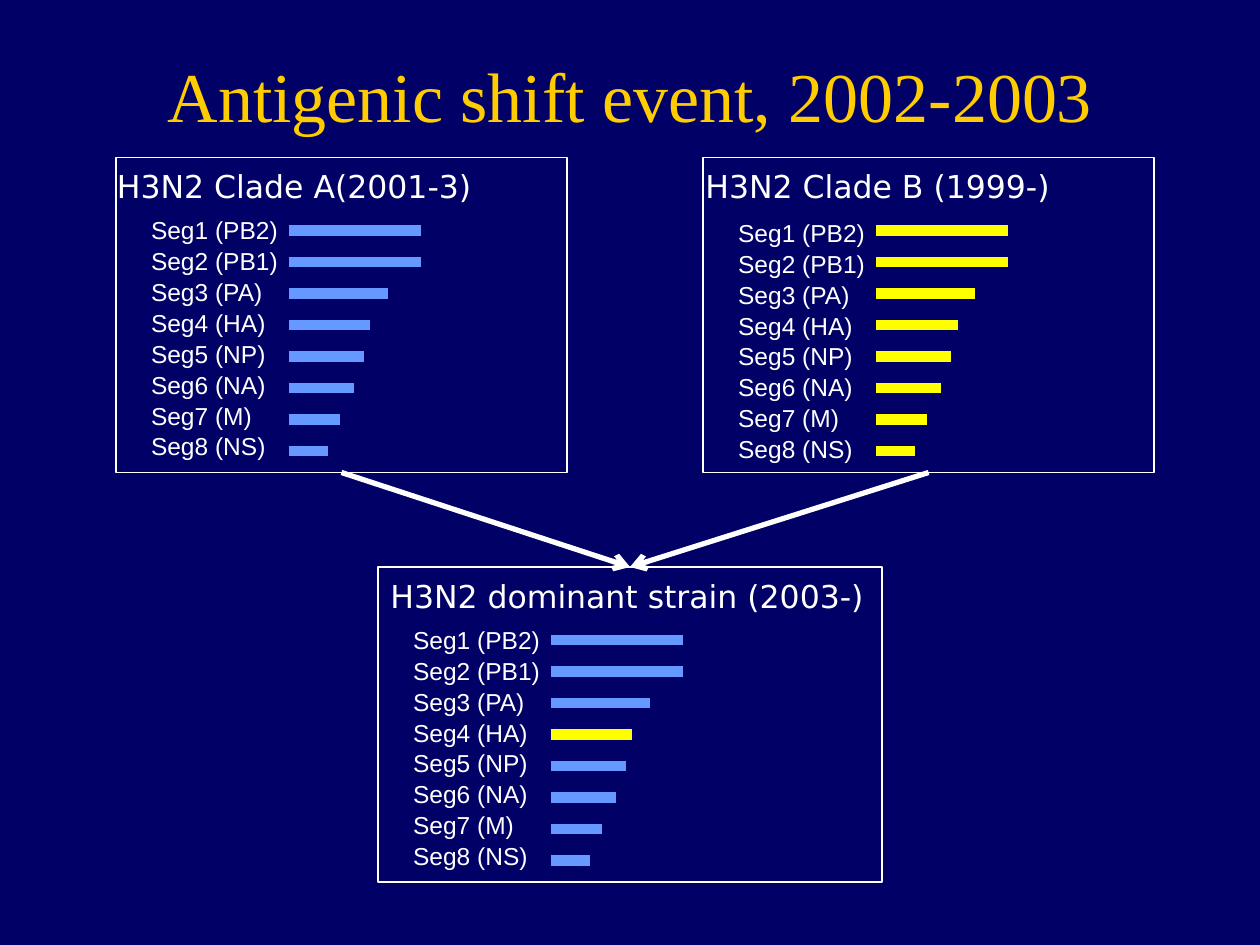
from dataclasses import dataclass

from lxml import etree
from pptx import Presentation
from pptx.dml.color import RGBColor
from pptx.enum import shapes, text
from pptx.oxml import ns
from pptx.util import Inches, Pt


@dataclass(frozen=True)
class Theme:
    background: str = "000066"
    title: str = "FFCC00"
    white: str = "FFFFFF"
    blue: str = "6699FF"
    yellow: str = "FFFF00"
    title_font: str = "Times New Roman"
    heading_font: str = "DejaVu Sans"
    label_font: str = "Arial"
    title_size: int = 40
    heading_size: int = 18
    label_size: int = 14
    bar_width: int = 6
    arrow_width: int = 3
    frame_width: float = 0.75


THEME = Theme()

# Segment name and bar length in inches
SEGMENTS = [
    ("Seg1 (PB2)", 1.05), ("Seg2 (PB1)", 1.05), ("Seg3 (PA)", 0.79),
    ("Seg4 (HA)", 0.65), ("Seg5 (NP)", 0.6), ("Seg6 (NA)", 0.52),
    ("Seg7 (M)", 0.41), ("Seg8 (NS)", 0.31),
]
BAR_LEFT, BAR_TOP, BAR_STEP = 1.37, 0.58, 0.25
PANEL_HEIGHT = 2.5


def write(frame, lines, *, font, size, color, align=None, spacing=None):
    """Fill a text frame with one paragraph per line."""
    for index, line in enumerate(lines):
        para = frame.add_paragraph() if index else frame.paragraphs[0]
        para.alignment = align
        para.line_spacing = spacing
        span = para.add_run()
        span.text = line
        span.font.name = font
        span.font.size = Pt(size)
        span.font.color.rgb = RGBColor.from_string(color)


def add_text(page, left, top, width, height, lines, **style):
    box = page.shapes.add_textbox(Inches(left), Inches(top), Inches(width), Inches(height))
    box.text_frame.word_wrap = False
    box.text_frame.auto_size = text.MSO_AUTO_SIZE.SHAPE_TO_FIT_TEXT
    write(box.text_frame, lines, **style)


def add_line(page, start, end, color, width):
    line = page.shapes.add_connector(
        shapes.MSO_CONNECTOR.STRAIGHT, *(Inches(value) for value in (*start, *end)))
    line.line.color.rgb = RGBColor.from_string(color)
    line.line.width = Pt(width)
    etree.SubElement(line._element.spPr, ns.qn("a:effectLst"))
    return line


def add_title(page, title):
    holder = page.shapes.title
    holder.left, holder.top = Inches(0.75), Inches(0.25)
    holder.width, holder.height = Inches(8.5), Inches(1)
    holder.text_frame.vertical_anchor = text.MSO_ANCHOR.MIDDLE
    write(holder.text_frame, [title], font=THEME.title_font, size=THEME.title_size,
          color=THEME.title, align=text.PP_ALIGN.CENTER)


def add_strain(page, left, top, width, heading, colors, *, heading_shift=0.0,
               heading_width=3.0, label_top=0.4):
    """Draw one strain panel and return its frame."""
    # Segment bars
    for index, ((_, length), color) in enumerate(zip(SEGMENTS, colors)):
        x, y = left + BAR_LEFT, top + BAR_TOP + index * BAR_STEP
        add_line(page, (x, y), (x + length, y), color, THEME.bar_width)

    # Segment names and heading
    add_text(page, left + 0.18, top + label_top, 1.21, 2.06,
             [name for name, _ in SEGMENTS], font=THEME.label_font,
             size=THEME.label_size, color=THEME.white, spacing=1.05)
    add_text(page, left + heading_shift, top + 0.03, heading_width, 0.4, [heading],
             font=THEME.heading_font, size=THEME.heading_size, color=THEME.white)

    # Frame
    frame = page.shapes.add_shape(shapes.MSO_SHAPE.RECTANGLE, Inches(left), Inches(top),
                                  Inches(width), Inches(PANEL_HEIGHT))
    frame.shadow.inherit = False
    frame.fill.background()
    frame.line.color.rgb = RGBColor.from_string(THEME.white)
    frame.line.width = Pt(THEME.frame_width)
    return frame


def add_descent_arrow(page, parent, child):
    """Join the bottom of a parent frame to the top of the child frame."""
    arrow = add_line(page, (0, 0), (1, 1), THEME.white, THEME.arrow_width)
    arrow.begin_connect(parent, 2)
    arrow.end_connect(child, 0)
    etree.SubElement(arrow.line._get_or_add_ln(), ns.qn("a:tailEnd"), type="arrow")


def main():
    deck = Presentation()
    deck.slide_width, deck.slide_height = Inches(10), Inches(7.5)
    page = deck.slides.add_slide(deck.slide_layouts[5])
    page.background.fill.solid()
    page.background.fill.fore_color.rgb = RGBColor.from_string(THEME.background)
    add_title(page, "Antigenic shift event, 2002-2003")

    # Parent clades, then the strain that takes HA from clade B
    all_blue = [THEME.blue] * len(SEGMENTS)
    all_yellow = [THEME.yellow] * len(SEGMENTS)
    mixed = [THEME.yellow if "HA" in name else THEME.blue for name, _ in SEGMENTS]
    clade_a = add_strain(page, 0.92, 1.25, 3.58, "H3N2 Clade A(2001-3)", all_blue,
                         heading_shift=-0.09, heading_width=3.07)
    clade_b = add_strain(page, 5.58, 1.25, 3.58, "H3N2 Clade B (1999-)", all_yellow,
                         heading_shift=-0.08, label_top=0.42)
    dominant = add_strain(page, 3, 4.5, 4, "H3N2 dominant strain (2003-)", mixed,
                          heading_width=4.03)

    for clade in (clade_a, clade_b):
        add_descent_arrow(page, clade, dominant)

    deck.save("out.pptx")


if __name__ == "__main__":
    main()
